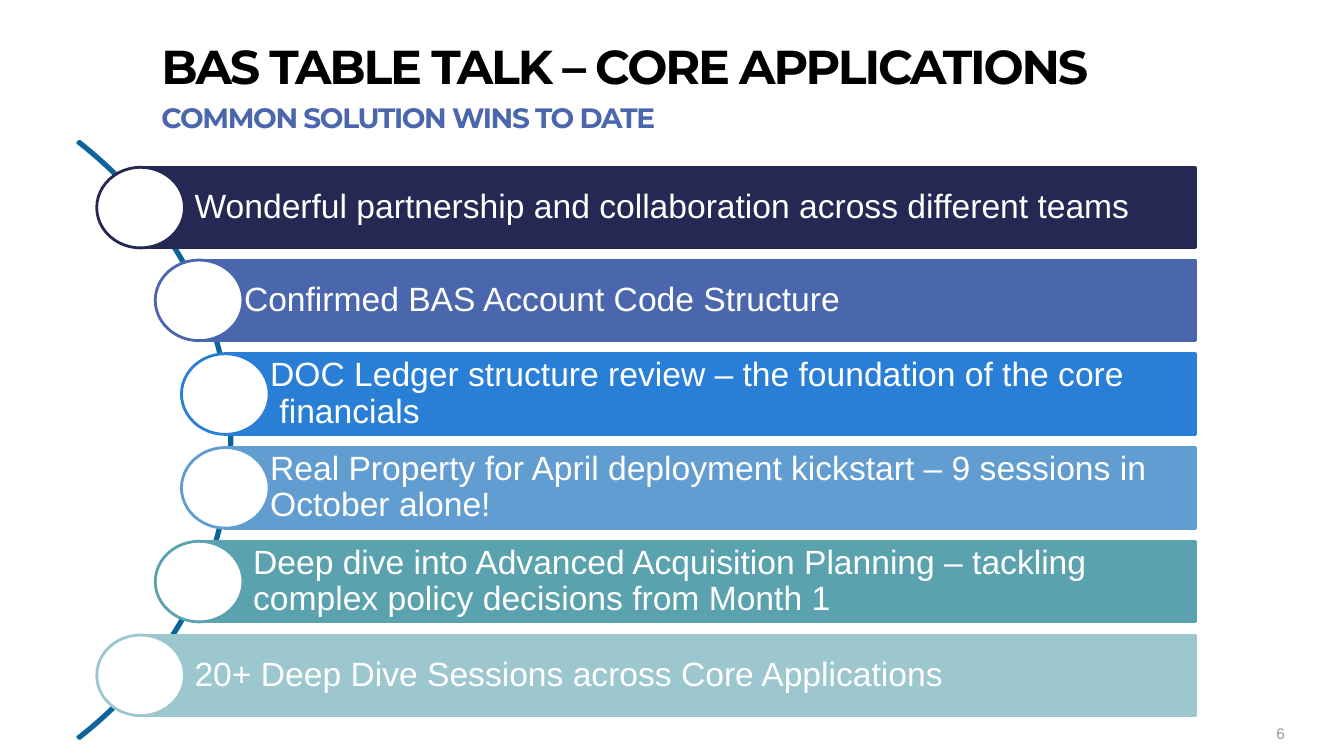
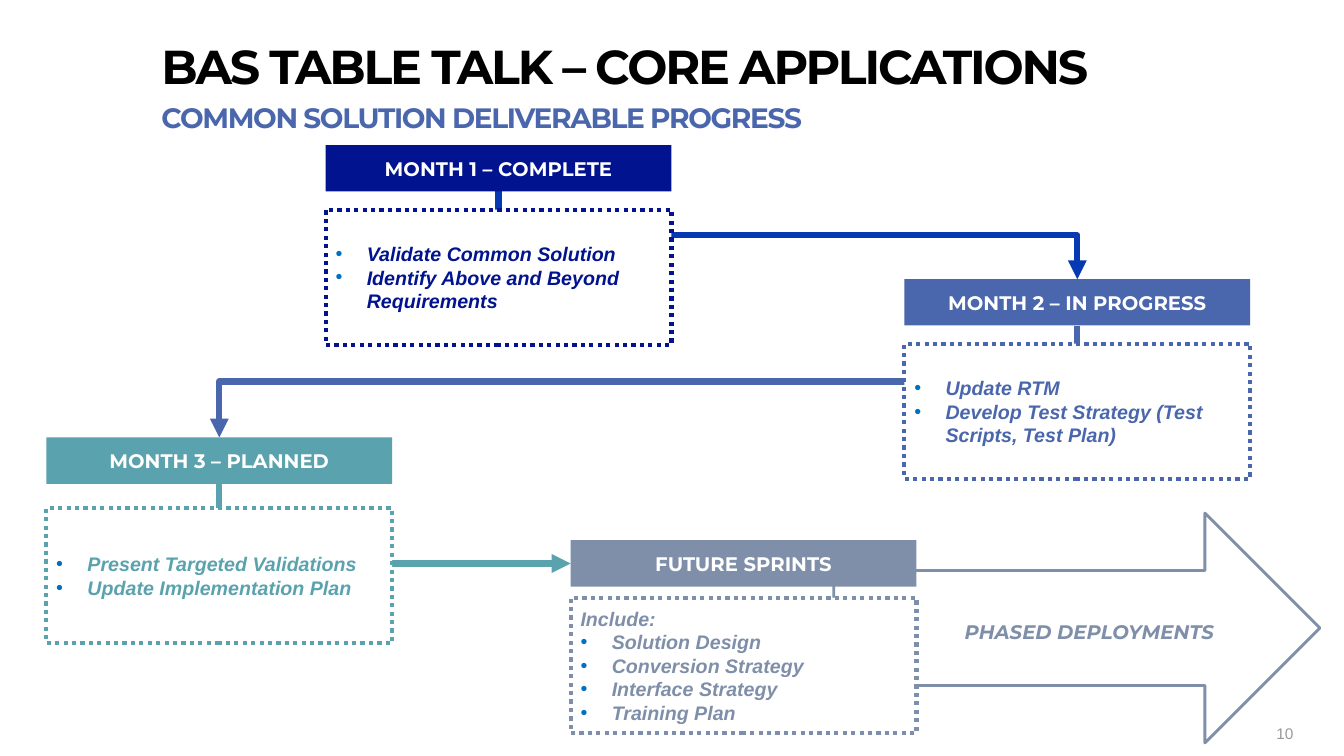
from lxml import etree
from pptx import Presentation
from pptx import util as u
from pptx.dml.color import RGBColor
from pptx.enum import dml, shapes, text
from pptx.oxml.ns import qn

SCALE = 9144
WHITE = RGBColor(0xFF, 0xFF, 0xFF)
BLACK = RGBColor(0x00, 0x00, 0x00)
GREY = RGBColor(0x99, 0x99, 0x99)
NAVY = RGBColor(0x24, 0x28, 0x52)
INDIGO = RGBColor(0x4A, 0x66, 0xAC)
BLUE = RGBColor(0x29, 0x7F, 0xD5)
SKY = RGBColor(0x62, 0x9D, 0xD1)
TEAL = RGBColor(0x5A, 0xA2, 0xAE)
MIST = RGBColor(0x9C, 0xC7, 0xCE)
ARC = RGBColor(0x0D, 0x64, 0x9A)
DEEP = RGBColor(0x01, 0x13, 0x8E)
ROYAL = RGBColor(0x07, 0x39, 0xB2)
SLATE = RGBColor(0x7F, 0x8F, 0xA9)
BULLET = "0070C0"
HEAD = "Montserrat"
BODY = "Arial"
CARD_W, HEAD_H, BOX_H = 343, 46, 134

KIND = shapes.MSO_SHAPE
LEFT, CENTER = text.PP_ALIGN.LEFT, text.PP_ALIGN.CENTER
TOP, MIDDLE = text.MSO_ANCHOR.TOP, text.MSO_ANCHOR.MIDDLE


def px(*vals):
    return [u.Emu(round(v * SCALE)) for v in vals]


def style(para, size, color, font=BODY, bold=False, italic=False, track=0):
    for run in para.runs:
        face = run.font
        face.name, face.size = font, u.Pt(size)
        face.bold, face.italic = bold, italic
        face.color.rgb = color
        if track:
            run._r.get_or_add_rPr().set("spc", str(track))


def write(shape, words, size, color, align=LEFT, anchor=MIDDLE,
          inset=(10, 5, 10, 5), space=None, **look):
    frame = shape.text_frame
    frame.text = words
    frame.word_wrap = True
    frame.auto_size = text.MSO_AUTO_SIZE.NONE
    frame.vertical_anchor = anchor
    (frame.margin_left, frame.margin_top,
     frame.margin_right, frame.margin_bottom) = px(*inset)
    for para in frame.paragraphs:
        para.alignment = align
        if space:
            para.line_spacing = space
        style(para, size, color, **look)


def label(slide, box, words, size, color, **look):
    write(slide.shapes.add_textbox(*px(*box)), words, size, color, **look)


def draw(slide, kind, box, fill=None, line=None, width=2, dash=None):
    shape = slide.shapes.add_shape(kind, *px(*box))
    shape.shadow.inherit = False
    if fill is None:
        shape.fill.background()
    else:
        shape.fill.solid()
        shape.fill.fore_color.rgb = fill
    if line is None:
        shape.line.fill.background()
    else:
        shape.line.color.rgb = line
        shape.line.width = u.Pt(width)
        if dash:
            shape.line.dash_style = dash
    return shape


def start(deck, sub, num):
    slide = deck.slides.add_slide(deck.slide_layouts[5])
    title = slide.shapes.title
    title.left, title.top, title.width, title.height = px(160, 41, 1010, 54)
    write(title, "BAS TABLE TALK – CORE APPLICATIONS", 34, BLACK, anchor=TOP,
          inset=(0, 7, 0, 0), space=0.8, font=HEAD, bold=True, track=-150)
    label(slide, (160, 96, 999, 56), sub, 20, INDIGO, anchor=TOP,
          inset=(0, 0, 0, 0), space=1.1, font=HEAD, bold=True, track=-100)
    label(slide, (1256, 713, 42, 23), num, 11, GREY, anchor=TOP)
    return slide


def bar(slide, left, top, right, color, inset, words):
    high, disc = 80, 87
    band = draw(slide, KIND.RECTANGLE, (left, top, right - left, high),
                color, color)
    write(band, words, 24, WHITE, inset=(inset, 7, 7, 7), space=0.9)
    draw(slide, KIND.OVAL, (left - disc // 2, top, disc, high), WHITE, color)


def wins(deck):
    slide = start(deck, "COMMON SOLUTION WINS TO DATE", "6")
    arc = draw(slide, KIND.BLOCK_ARC, (-665, 41, 895, 791), line=ARC)
    for i, val in enumerate((189, 27, 0.003)):
        arc.adjustments[i] = val
    rows = (
        (139, NAVY, 54, "Wonderful partnership and collaboration across "
                        "different teams"),
        (197, INDIGO, 45, "Confirmed BAS Account Code Structure"),
        (223, BLUE, 45, "DOC Ledger structure review – the foundation of "
                        "the core\v financials"),
        (223, SKY, 45, "Real Property for April deployment kickstart – "
                       "9 sessions in October alone!"),
        (197, TEAL, 54, "Deep dive into Advanced Acquisition Planning – "
                        "tackling\vcomplex policy decisions from Month 1"),
        (139, MIST, 54, "20+ Deep Dive Sessions across Core Applications"),
    )
    for i, (left, color, inset, words) in enumerate(rows):
        bar(slide, left, 166 + i * 464 // 5, 1186, color, inset, words)


def dot(para):
    props = para._p.get_or_add_pPr()
    step = px(31)[0]
    props.set("marL", str(step))
    props.set("indent", str(-step))
    tint = etree.SubElement(props, qn("a:buClr"))
    etree.SubElement(tint, qn("a:srgbClr")).set("val", BULLET)
    etree.SubElement(props, qn("a:buFont")).set("typeface", BODY)
    etree.SubElement(props, qn("a:buChar")).set("char", "•")


def card(slide, left, top, drop, color, name, items, intro=None):
    head = draw(slide, KIND.RECTANGLE, (left, top, CARD_W, HEAD_H), color)
    write(head, name, 14, WHITE, align=CENTER, font=HEAD, bold=True)
    box = draw(slide, KIND.RECTANGLE, (left, top + drop, CARD_W, BOX_H),
               WHITE, color, 3, dml.MSO_LINE.ROUND_DOT)
    lines = ([intro] if intro else []) + items
    write(box, "\n".join(lines), 14, color, bold=True, italic=True)
    for para in box.text_frame.paragraphs[len(lines) - len(items):]:
        dot(para)


def link(slide, x1, y1, x2, y2, color, prst="bentConnector3"):
    wide, high = y2 - y1, abs(x2 - x1)
    left, top = (x1 + x2 - wide) / 2, (y1 + y2 - high) / 2
    line = slide.shapes.add_connector(
        shapes.MSO_CONNECTOR.ELBOW, *px(left, top, left + wide, top + high))
    line.line.color.rgb = color
    line.line.width = u.Pt(4.5)
    tail = etree.SubElement(line.line._get_or_add_ln(), qn("a:tailEnd"))
    tail.set("type", "triangle")
    props = line._element.spPr
    etree.SubElement(props, qn("a:effectLst"))
    props.find(qn("a:prstGeom")).set("prst", prst)
    form = props.find(qn("a:xfrm"))
    if x2 > x1:
        form.set("rot", "16200000")
        form.set("flipH", "1")
    else:
        form.set("rot", "5400000")


def plan(deck):
    slide = start(deck, "COMMON SOLUTION DELIVERABLE PROGRESS", "10")
    draw(slide, KIND.RIGHT_ARROW, (827, 509, 482, 228), WHITE, SLATE)
    cards = (
        (323, 144, 64, DEEP, "MONTH 1 – COMPLETE",
         ["Validate Common Solution",
          "Identify Above and Beyond Requirements"]),
        (897, 277, 64, INDIGO, "MONTH 2 – IN PROGRESS",
         ["Update RTM", "Develop Test Strategy (Test Scripts, Test Plan)"]),
        (46, 434, 70, TEAL, "MONTH 3 – PLANNED",
         ["Present Targeted Validations", "Update Implementation Plan"]),
        (566, 536, 57, SLATE, "FUTURE SPRINTS",
         ["Solution Design", "Conversion Strategy", "Interface Strategy",
          "Training Plan"], "Include:"),
    )
    one, two, three, last = [(c[0] + CARD_W / 2, c[1]) for c in cards]
    for src, end, color in ((one, two, ROYAL), (two, three, INDIGO)):
        link(slide, src[0], src[1] + HEAD_H, *end, color)
    link(slide, three[0], three[1] + HEAD_H, cards[3][0],
         last[1] + HEAD_H / 2, TEAL, "bentConnector2")
    for item in cards:
        card(slide, *item)
    label(slide, (909, 604, CARD_W, HEAD_H), "PHASED DEPLOYMENTS", 14, SLATE,
          align=CENTER, font=HEAD, bold=True, italic=True)


def main():
    deck = Presentation()
    deck.slide_width, deck.slide_height = px(1333, 750)
    wins(deck)
    plan(deck)
    deck.save("out.pptx")


if __name__ == "__main__":
    main()
